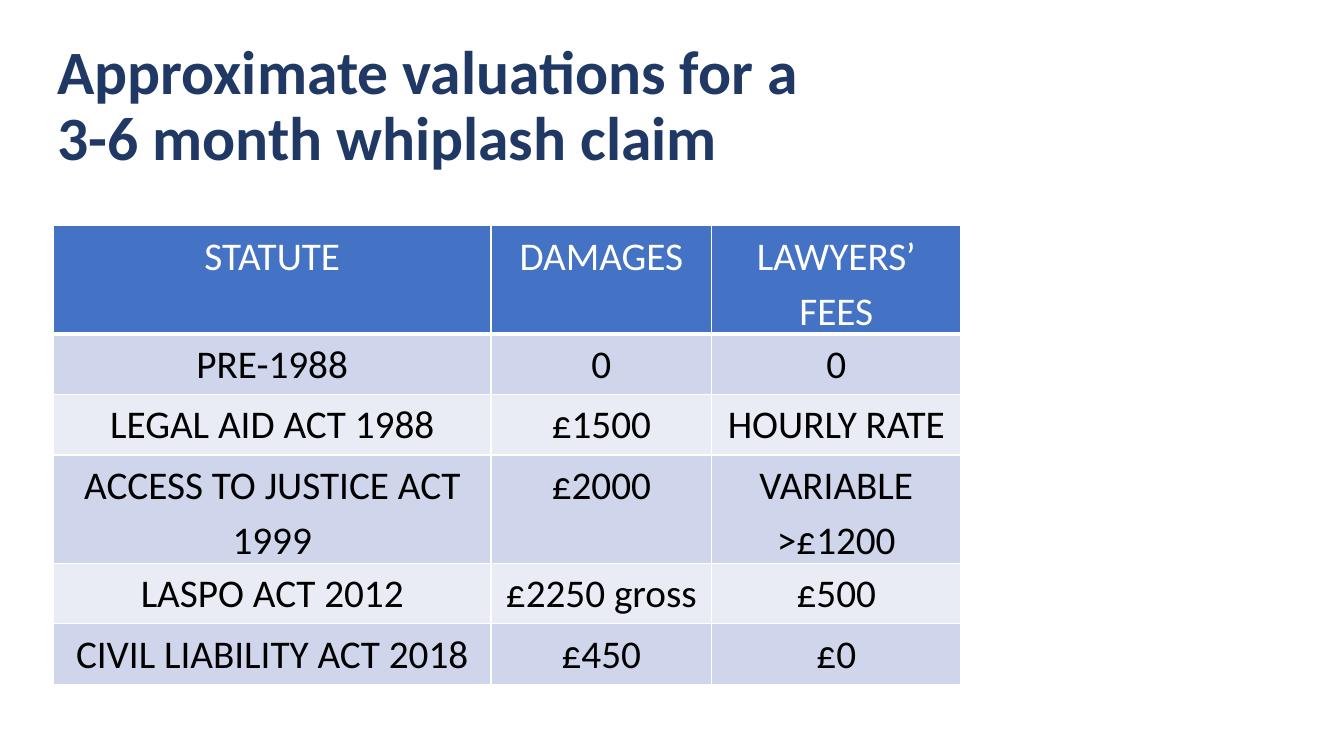
from lxml import etree
from pptx import Presentation
from pptx.dml.color import RGBColor
from pptx.enum.text import MSO_ANCHOR, PP_ALIGN
from pptx.oxml.ns import qn
from pptx.util import Emu, Pt

PX = 9144
CENTER = PP_ALIGN.CENTER
MIDDLE = MSO_ANCHOR.MIDDLE
TOP = MSO_ANCHOR.TOP

NAVY = "203864"
WHITE = "FFFFFF"
BLACK = "000000"
HEADER = "4472C4"
BANDS = ("CFD5EA", "E9EBF5")

TITLE = ("Approximate valuations for a", "3-6 month whiplash claim")
COLUMNS = (434, 219, 247)
HEIGHTS = (106, 60, 60, 106, 60, 60)
VALUATIONS = (
    ("STATUTE", "DAMAGES", "LAWYERS’ FEES"),
    ("PRE-1988", "0", "0"),
    ("LEGAL AID ACT 1988", "£1500", "HOURLY RATE"),
    ("ACCESS TO JUSTICE ACT 1999", "£2000", "VARIABLE >£1200"),
    ("LASPO ACT 2012", "£2250 gross", "£500"),
    ("CIVIL LIABILITY ACT 2018", "£450", "£0"),
)


def px(n):
    return Emu(n * PX)


def rgb(color):
    return RGBColor.from_string(color)


class SlideBuilder:
    """Holds the text style and the slide that elements are added to."""

    def __init__(self, slide, font_name):
        self.slide = slide
        self.font_name = font_name

    def style(self, p, size, color, spacing, bold=False):
        p.line_spacing = spacing
        p.font.name = self.font_name
        p.font.size = Pt(size)
        p.font.bold = bold
        p.font.color.rgb = rgb(color)

    def title(self, lines, x, y, w, h):
        tf = self.slide.shapes.add_textbox(px(x), px(y), px(w), px(h)).text_frame
        tf.word_wrap = True
        tf.vertical_anchor = MIDDLE
        p = tf.paragraphs[0]
        for i, line in enumerate(lines):
            if i:
                p.add_line_break()
            p.add_run().text = line
        self.style(p, 44, NAVY, 0.9, bold=True)

    def border(self, cell, side, width):
        tc_pr = cell._tc.get_or_add_tcPr()
        ln = etree.SubElement(tc_pr, qn(f"a:ln{side}"), w=str(Pt(width)))
        fill = etree.SubElement(ln, qn("a:solidFill"))
        etree.SubElement(fill, qn("a:srgbClr"), val=WHITE)

    def cell(self, cell, text, fill, color, bottom):
        cell.margin_left = cell.margin_right = px(7)
        cell.margin_top = cell.margin_bottom = 0
        cell.vertical_anchor = TOP
        for side, width in (("L", 1), ("R", 1), ("T", 1), ("B", bottom)):
            self.border(cell, side, width)
        cell.fill.solid()
        cell.fill.fore_color.rgb = rgb(fill)
        p = cell.text_frame.paragraphs[0]
        p.text = text
        p.alignment = CENTER
        self.style(p, 28, color, 1.15)

    def table(self, rows, x, y, widths, heights):
        table = self.slide.shapes.add_table(
            len(rows), len(widths), px(x), px(y), px(sum(widths)), px(sum(heights))
        ).table
        table.first_row = table.horz_banding = False
        for column, width in zip(table.columns, widths):
            column.width = px(width)
        for r, (row, height) in enumerate(zip(rows, heights)):
            table.rows[r].height = px(height)
            look = (BANDS[(r - 1) % 2], BLACK, 1) if r else (HEADER, WHITE, 3)
            for c, text in enumerate(row):
                self.cell(table.cell(r, c), text, *look)


def main():
    prs = Presentation()
    prs.slide_width, prs.slide_height = px(1333), px(750)
    s = SlideBuilder(prs.slides.add_slide(prs.slide_layouts[6]), "Calibri")
    s.title(TITLE, 47, 34, 1150, 145)
    s.table(VALUATIONS, 53, 224, COLUMNS, HEIGHTS)
    prs.save("out.pptx")


if __name__ == "__main__":
    main()
